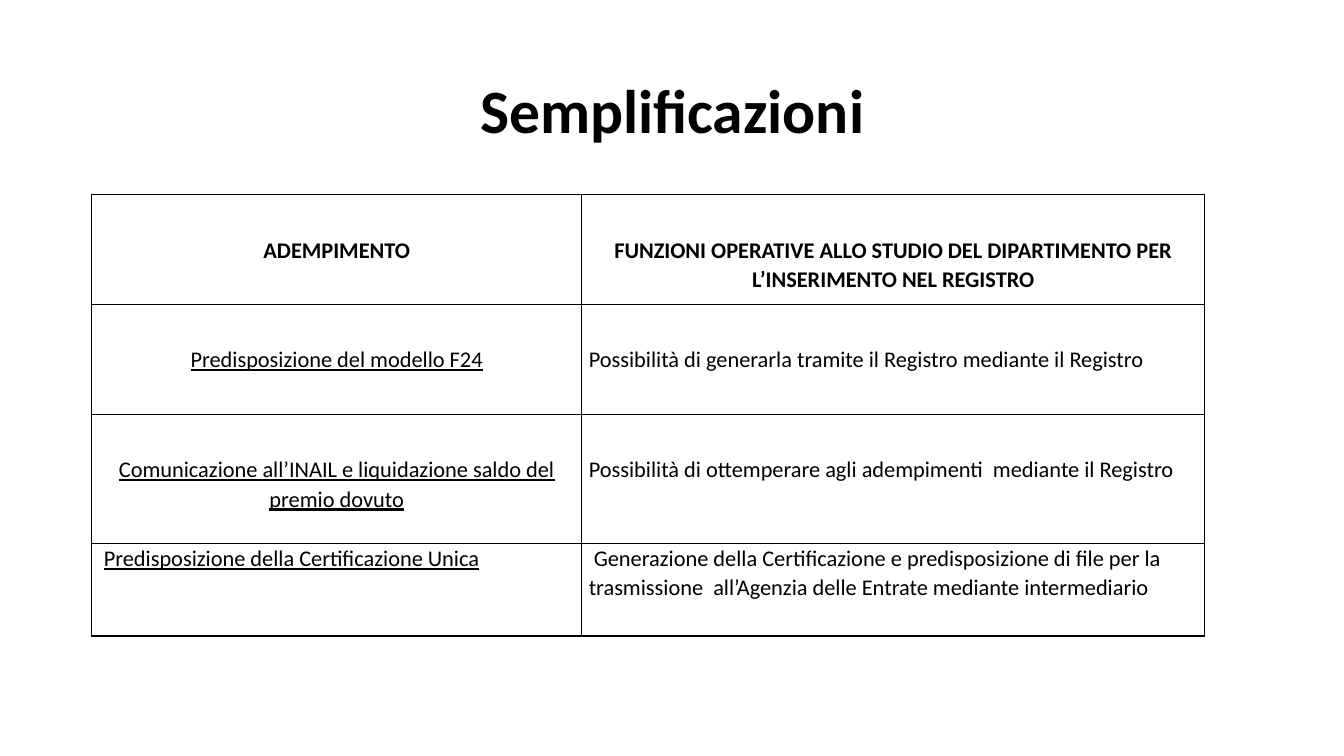
from pptx import Presentation
from pptx.dml.color import RGBColor
from pptx.enum.text import MSO_ANCHOR as Anchor, PP_ALIGN as Align
from pptx.oxml import parse_xml
from pptx.oxml.ns import nsdecls
from pptx.util import Inches, Pt

BLACK = "000000"
COLUMN_WIDTHS = [4.86, 6.18]
ROW_HEIGHTS = [1.09, 1.09, 1.28, 0.92]
TOP_MARGINS = [0.4, 0.4, 0.4, 0]
ROWS = [
    ("ADEMPIMENTO",
     "FUNZIONI OPERATIVE ALLO STUDIO DEL DIPARTIMENTO PER L’INSERIMENTO NEL REGISTRO"),
    ("Predisposizione del modello F24",
     "Possibilità di generarla tramite il Registro mediante il Registro"),
    ("Comunicazione all’INAIL e liquidazione saldo del premio dovuto",
     "Possibilità di ottemperare agli adempimenti  mediante il Registro"),
    ("Predisposizione della Certificazione Unica",
     "Generazione della Certificazione e predisposizione di file per la "
     "trasmissione  all’Agenzia delle Entrate mediante intermediario"),
]


def color(value):
    return RGBColor.from_string(value)


def write(frame, text, size=16, bold=False, underline=False, align=Align.LEFT,
          spacing=1.07, after=8, indent=0):
    paragraph = frame.paragraphs[0]
    paragraph.alignment = align
    paragraph.line_spacing = spacing
    paragraph.space_after = Pt(after)
    if indent:
        paragraph._p.get_or_add_pPr().set("indent", str(Inches(indent)))
    run = paragraph.add_run()
    run.text = text
    run.font.name = "Calibri"
    run.font.size = Pt(size)
    run.font.bold = bold
    run.font.underline = underline
    run.font.color.rgb = color(BLACK)


def set_borders(cell, value, width):
    properties = cell._tc.get_or_add_tcPr()
    for position, side in enumerate(("lnL", "lnR", "lnT", "lnB")):
        properties.insert(position, parse_xml(
            f'<a:{side} {nsdecls("a")} w="{Pt(width)}"><a:solidFill>'
            f'<a:srgbClr val="{value}"/></a:solidFill></a:{side}>'))


def add_title(slide, left, top, width, height):
    shape = slide.shapes.add_textbox(Inches(left), Inches(top), Inches(width), Inches(height))
    frame = shape.text_frame
    frame.word_wrap = True
    frame.vertical_anchor = Anchor.MIDDLE
    write(frame, "Semplificazioni", size=44, bold=True, align=Align.CENTER,
          spacing=0.9, after=0)


def add_duties_table(slide, left, top):
    table = slide.shapes.add_table(
        len(ROWS), len(COLUMN_WIDTHS), Inches(left), Inches(top),
        Inches(sum(COLUMN_WIDTHS)), Inches(sum(ROW_HEIGHTS))).table
    table.first_row = table.horz_banding = False
    for column, width in zip(table.columns, COLUMN_WIDTHS):
        column.width = Inches(width)
    last = len(ROWS) - 1
    for row, texts in enumerate(ROWS):
        table.rows[row].height = Inches(ROW_HEIGHTS[row])
        for column, text in enumerate(texts):
            cell = table.cell(row, column)
            cell.fill.background()
            cell.margin_left = cell.margin_right = Inches(0.07)
            cell.margin_top = Inches(TOP_MARGINS[row])
            cell.margin_bottom = 0
            set_borders(cell, BLACK, 1)
            centered = row == 0 or (column == 0 and row < last)
            write(cell.text_frame, text, bold=row == 0,
                  underline=row > 0 and column == 0,
                  align=Align.CENTER if centered else Align.LEFT,
                  indent=0.05 if row == last else 0)


def main():
    presentation = Presentation()
    presentation.slide_width = Inches(13.33)
    presentation.slide_height = Inches(7.5)
    slide = presentation.slides.add_slide(presentation.slide_layouts[6])
    add_title(slide, 0.92, 0.4, 11.5, 1.45)
    add_duties_table(slide, 0.91, 1.93)
    presentation.save("out.pptx")


if __name__ == "__main__":
    main()
